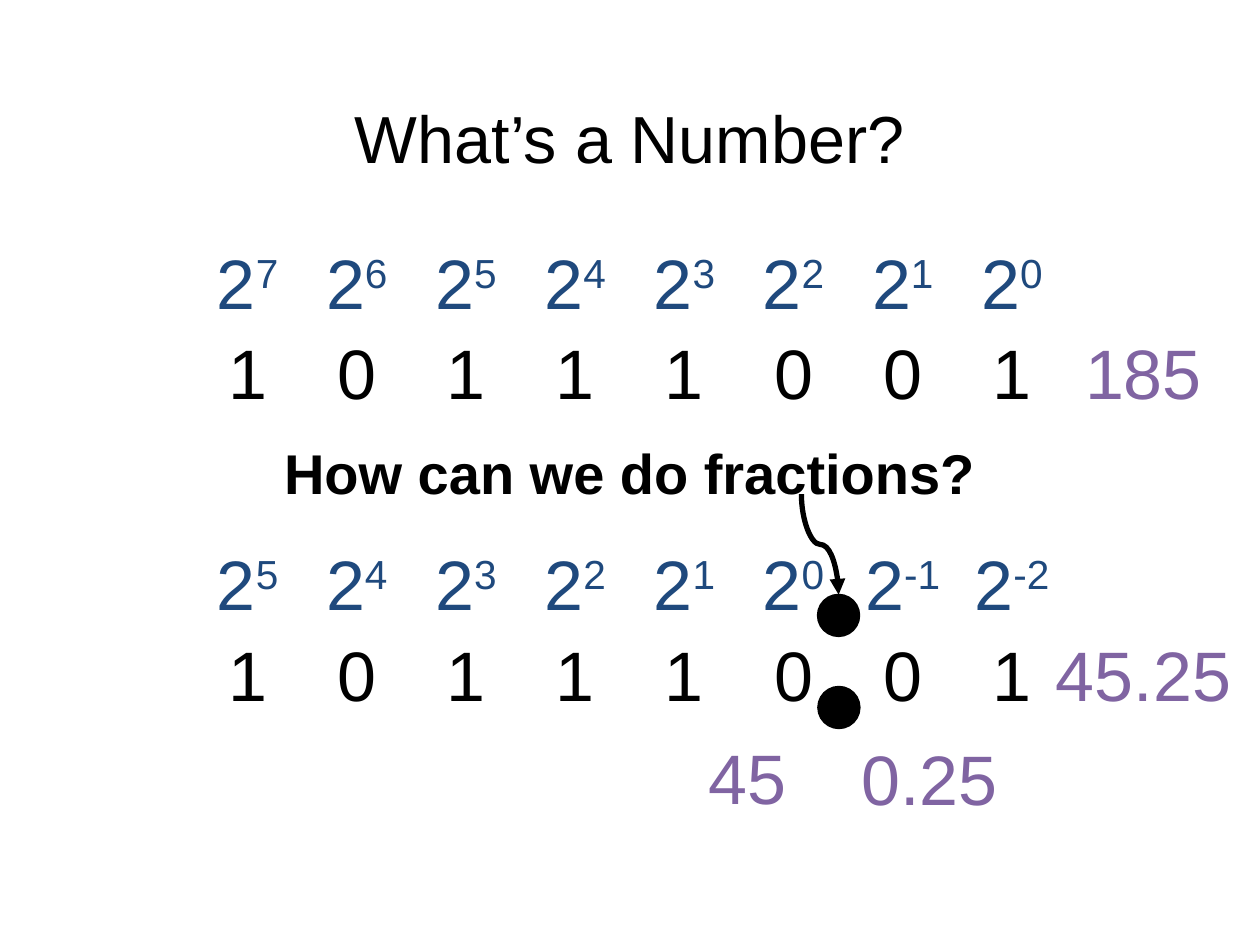
from pptx import Presentation
from pptx.dml.color import RGBColor
from pptx.enum.shapes import MSO_CONNECTOR as CONN, MSO_SHAPE as SHAPE
from pptx.enum.text import MSO_ANCHOR as ANCHOR, MSO_AUTO_SIZE as AUTO, PP_ALIGN as ALIGN
from pptx.oxml.ns import qn
from pptx.util import Pt
from lxml.etree import SubElement

BLACK = RGBColor(0x00, 0x00, 0x00)
BLUE = RGBColor(0x1F, 0x49, 0x7D)
PURPLE = RGBColor(0x80, 0x64, 0xA2)

FONT = "Arial"
COL_LEFT, COL_STEP, COL_W, ROW_H = 108.7, 62.4, 65.5, 55.4
BITS = "10111001"
DOT = 23.8


def add_run(p, text, size, color, bold=False):
    r = p.add_run()
    r.text = text
    r.font.name = FONT
    r.font.size = Pt(size)
    r.font.bold = bold
    r.font.color.rgb = color
    return r


def add_label(s, x, y, w, h, text, size=40, color=BLACK, bold=False):
    """Add a centred text box and return it."""
    sp = s.shapes.add_textbox(Pt(x), Pt(y), Pt(w), Pt(h))
    tf = sp.text_frame
    tf.word_wrap = True
    tf.auto_size = AUTO.SHAPE_TO_FIT_TEXT
    p = tf.paragraphs[0]
    p.alignment = ALIGN.CENTER
    add_run(p, text, size, color, bold)
    return sp


def add_title(s, text):
    sp = add_label(s, 49.7, 28.8, 620.6, 104.4, text, 38)
    tf = sp.text_frame
    tf.auto_size = AUTO.NONE
    tf.vertical_anchor = ANCHOR.MIDDLE
    tf.paragraphs[0].line_spacing = 0.9


def add_powers(s, y, highest):
    """Add a row of descending powers of two, one per bit."""
    for i in range(len(BITS)):
        sp = add_label(s, COL_LEFT + i * COL_STEP, y, COL_W, ROW_H, "2", color=BLUE)
        r = add_run(sp.text_frame.paragraphs[0], str(highest - i), 40, BLUE)
        r.font._element.set("baseline", "30000")


def add_bits(s, y):
    for i, bit in enumerate(BITS):
        add_label(s, COL_LEFT + i * COL_STEP, y, COL_W, ROW_H, bit)


def add_value(s, x, y, w, text):
    add_label(s, x, y, w, ROW_H, text, color=PURPLE)


def add_dot(s, x, y):
    sp = s.shapes.add_shape(SHAPE.OVAL, Pt(x), Pt(y), Pt(DOT), Pt(DOT))
    sp.shadow.inherit = False
    sp.fill.solid()
    sp.fill.fore_color.rgb = BLACK
    sp.line.color.rgb = BLACK
    sp.line.width = Pt(1)


def add_curved_arrow(s, x1, y1, x2, y2):
    """Add an S-curve that leaves and arrives vertically, going down and right."""
    cx, cy = (x1 + x2) / 2, (y1 + y2) / 2
    half_w, half_h = (y2 - y1) / 2, (x2 - x1) / 2
    # Drawn flipped and lying on its side, then turned upright
    c = s.shapes.add_connector(CONN.CURVE, Pt(cx + half_w), Pt(cy - half_h),
                               Pt(cx - half_w), Pt(cy + half_h))
    c.line.color.rgb = BLACK
    c.line.width = Pt(3)
    SubElement(c.line._get_or_add_ln(), qn("a:tailEnd"), type="triangle")
    sp_pr = c._element.spPr
    SubElement(sp_pr, qn("a:effectLst"))
    sp_pr.find(qn("a:xfrm")).set("rot", str(270 * 60000))


def main():
    prs = Presentation()
    prs.slide_width, prs.slide_height = Pt(720), Pt(540)
    s = prs.slides.add_slide(prs.slide_layouts[6])

    add_title(s, "What’s a Number?")
    add_powers(s, 133.2, highest=7)
    add_bits(s, 185)
    add_value(s, 611.3, 185, 84.2, "185")

    add_label(s, 30.2, 247, 659.5, 46, "How can we do fractions?", 32, bold=True)

    add_powers(s, 305.3, highest=5)
    add_dot(s, 467.3, 339.8)
    add_curved_arrow(s, 457.9, 282.4, 479.2, 339.8)
    add_bits(s, 357.1)
    add_value(s, 591.1, 357.1, 124.6, "45.25")
    add_dot(s, 467.5, 392.4)
    add_value(s, 375.8, 416.2, 103, "45")
    add_value(s, 479.5, 416.9, 103, "0.25")

    prs.save("out.pptx")


if __name__ == "__main__":
    main()
